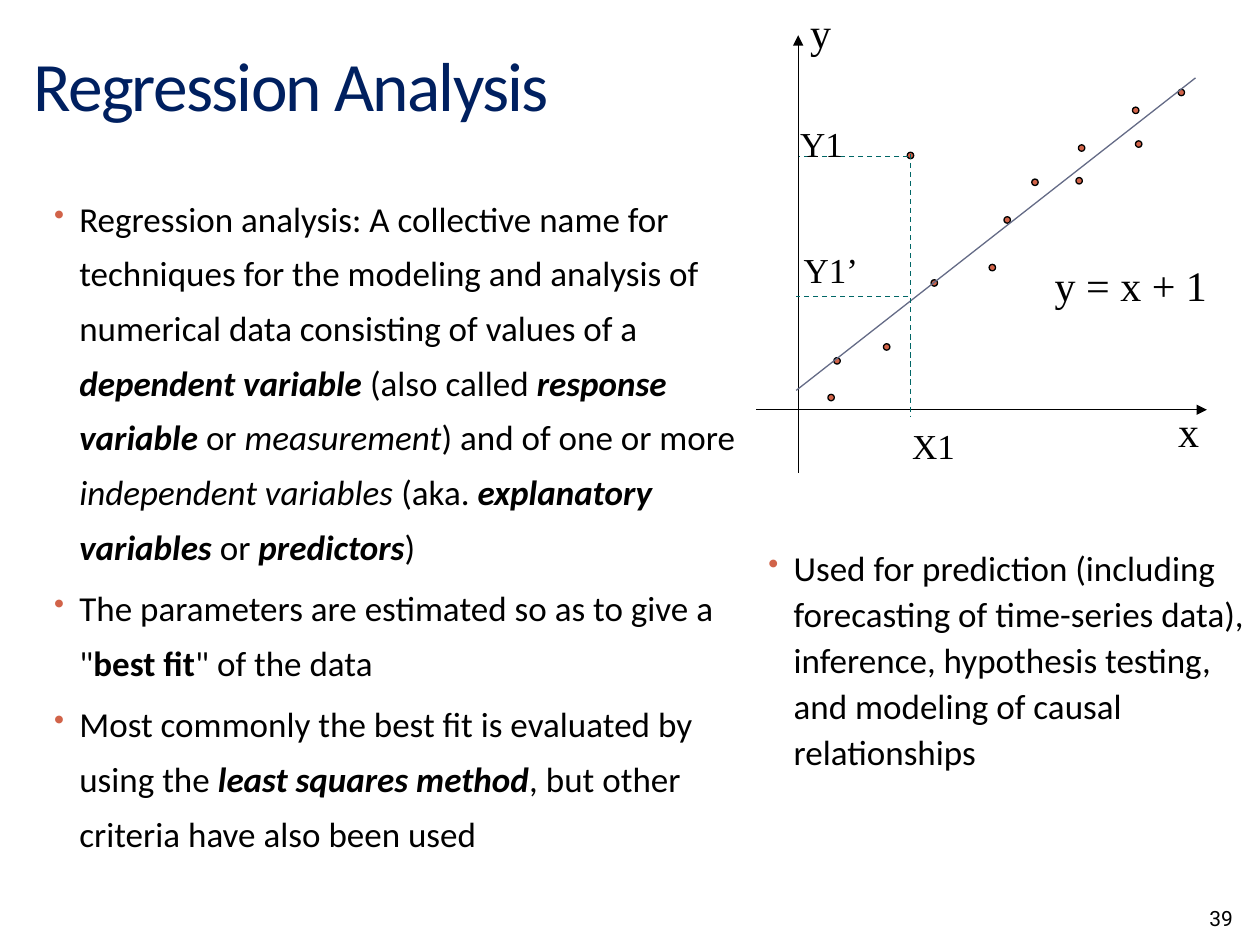
"""Build the regression analysis slide with its scatter diagram."""
from dataclasses import dataclass

from lxml.etree import SubElement
from pptx import Presentation
from pptx.dml.color import RGBColor
from pptx.enum.dml import MSO_LINE
from pptx.enum.shapes import MSO_CONNECTOR, MSO_SHAPE
from pptx.enum.text import MSO_ANCHOR, MSO_AUTO_SIZE
from pptx.oxml.ns import qn
from pptx.util import Cm, Pt


@dataclass(frozen=True)
class Theme:
    title_color: str = "002060"
    ink: str = "000000"
    accent: str = "D16349"
    trend: str = "646B86"
    guide: str = "006666"
    body_font: str = "Calibri"
    diagram_font: str = "Times New Roman"
    number_font: str = "Roboto"
    title_size: float = 39.6
    body_size: float = 20
    axis_size: float = 24
    number_size: float = 12
    line_width: float = 0.75
    dot_size: float = 0.13


class SlideBuilder:
    def __init__(self, page, theme):
        self.page = page
        self.theme = theme

    def frame(self, place, **format_values):
        box = self.page.shapes.add_textbox(*map(Cm, place))
        for name, value in {"word_wrap": True, **format_values}.items():
            setattr(box.text_frame, name, value)
        return box.text_frame

    def span(self, para, text, font, size, color, style=""):
        span = para.add_run()
        span.text = text
        values = {"name": font, "size": Pt(size), "bold": "b" in style, "italic": "i" in style}
        for name, value in values.items():
            setattr(span.font, name, value)
        span.font.color.rgb = RGBColor.from_string(color)
        return span

    def title(self, place, text):
        theme = self.theme
        frame = self.frame(place, vertical_anchor=MSO_ANCHOR.MIDDLE)
        span = self.span(frame.paragraphs[0], text, theme.body_font, theme.title_size, theme.title_color)
        span.font._element.set("spc", "-100")

    def label(self, place, text, size):
        frame = self.frame(place, word_wrap=False, auto_size=MSO_AUTO_SIZE.SHAPE_TO_FIT_TEXT)
        self.span(frame.paragraphs[0], text, self.theme.diagram_font, size, self.theme.ink)

    def number(self, place, text):
        theme = self.theme
        self.span(self.frame(place).paragraphs[0], text, theme.number_font, theme.number_size, theme.ink)

    def bullets(self, place, items, line_spacing):
        theme = self.theme
        frame = self.frame(place)
        for index, item in enumerate(items):
            para = frame.add_paragraph() if index else frame.paragraphs[0]
            for name, value in {"line_spacing": line_spacing, "space_before": Pt(4)}.items():
                setattr(para, name, value)
            self.bullet_mark(para)
            for text, style in item:
                self.span(para, text, theme.body_font, theme.body_size, theme.ink, style)

    def bullet_mark(self, para):
        properties = para._p.get_or_add_pPr()
        for name, value in {"marL": Cm(0.51), "indent": Cm(-0.51)}.items():
            properties.set(name, str(value))
        color = SubElement(properties, qn("a:buClr"))
        SubElement(color, qn("a:srgbClr"), val=self.theme.accent)
        SubElement(properties, qn("a:buSzPct"), val="85000")
        SubElement(properties, qn("a:buChar"), char="•")

    def line(self, ends, color, dashed=False, arrow=False):
        line = self.page.shapes.add_connector(MSO_CONNECTOR.STRAIGHT, *map(Cm, ends))
        line.line.color.rgb = RGBColor.from_string(color)
        line.line.width = Pt(self.theme.line_width)
        if dashed:
            line.line.dash_style = MSO_LINE.DASH
        properties = line._element.spPr
        if arrow:
            SubElement(properties.find(qn("a:ln")), qn("a:tailEnd"), type="triangle")
        SubElement(properties, qn("a:effectLst"))

    def dot(self, left, top):
        size = Cm(self.theme.dot_size)
        dot = self.page.shapes.add_shape(MSO_SHAPE.OVAL, Cm(left), Cm(top), size, size)
        dot.shadow.inherit = False
        dot.fill.solid()
        dot.fill.fore_color.rgb = RGBColor.from_string(self.theme.accent)
        dot.line.color.rgb = RGBColor.from_string(self.theme.ink)
        dot.line.width = Pt(self.theme.line_width)


DEFINITIONS = [
    [
        ("Regression analysis: A collective name for techniques for the modeling and analysis of "
         "numerical data consisting of values of a ", ""),
        ("dependent variable ", "bi"), ("(also called ", ""), ("response variable ", "bi"),
        ("or ", ""), ("measurement", "i"), (") and of one or more ", ""),
        ("independent variables", "i"), (" (aka. ", ""), ("explanatory variables ", "bi"),
        ("or ", ""), ("predictors", "bi"), (")", ""),
    ],
    [
        ('The parameters are estimated so as to give a "', ""), ("best fit", "b"),
        ('" of the data', ""),
    ],
    [
        ("Most commonly the best fit is evaluated by using the ", ""),
        ("least squares method", "bi"), (", but other criteria have also been used", ""),
    ],
]
USES = [[("Used for prediction (including forecasting of time-series data), inference, "
          "hypothesis testing, and modeling of causal relationships", "")]]
DOTS = [
    (19.94, 5.33), (18.77, 5.64), (18.29, 3.07), (17.81, 6.93), (20.24, 4.37),
    (20.8, 3.61), (16.81, 7.21), (21.69, 3.58), (21.74, 2.92), (22.89, 2.84),
    (16.69, 7.95), (22.83, 2.16), (23.75, 1.8),
]
AXES = [(15.24, 8.26, 24.33, 8.26), (16.09, 9.53, 16.09, 0.71)]
GUIDES = [(18.36, 3.1, 18.36, 8.41), (18.31, 3.15, 16.1, 3.15), (18.31, 5.97, 16.05, 5.97)]
AXIS_LABELS = [
    ("y", (16.08, 0, 0.94, 1.27)),
    ("x", (23.5, 8.05, 0.94, 1.27)),
    ("y = x + 1", (21.01, 5.11, 3.58, 1.27)),
]
VALUE_LABELS = [
    ("X1", (18.14, 8.43, 1.37, 1.09)),
    ("Y1", (15.88, 2.34, 1.37, 1.09)),
    ("Y1’", (15.95, 4.88, 1.6, 1.09)),
]


def main():
    deck = Presentation()
    deck.slide_width, deck.slide_height = Cm(25.4), Cm(19.05)
    theme = Theme()
    builder = SlideBuilder(deck.slides.add_slide(deck.slide_layouts[6]), theme)
    builder.title((0.43, 0.84, 17.35, 1.7), "Regression Analysis")
    builder.bullets((0.84, 3.6, 15.04, 14.4), DEFINITIONS, 1.3)
    builder.bullets((15.24, 10.8, 10.59, 6.35), USES, 1.1)
    for ends in AXES:
        builder.line(ends, theme.ink, arrow=True)
    for left, top in DOTS:
        builder.dot(left, top)
    builder.line((16.05, 7.87, 24.1, 1.57), theme.trend)
    for ends in GUIDES:
        builder.line(ends, theme.guide, dashed=True)
    for labels, size in ((AXIS_LABELS, theme.axis_size), (VALUE_LABELS, theme.body_size)):
        for text, place in labels:
            builder.label(place, text, size)
    builder.number((24.13, 18.14, 1.27, 0.91), "39")
    deck.save("out.pptx")


if __name__ == "__main__":
    main()
